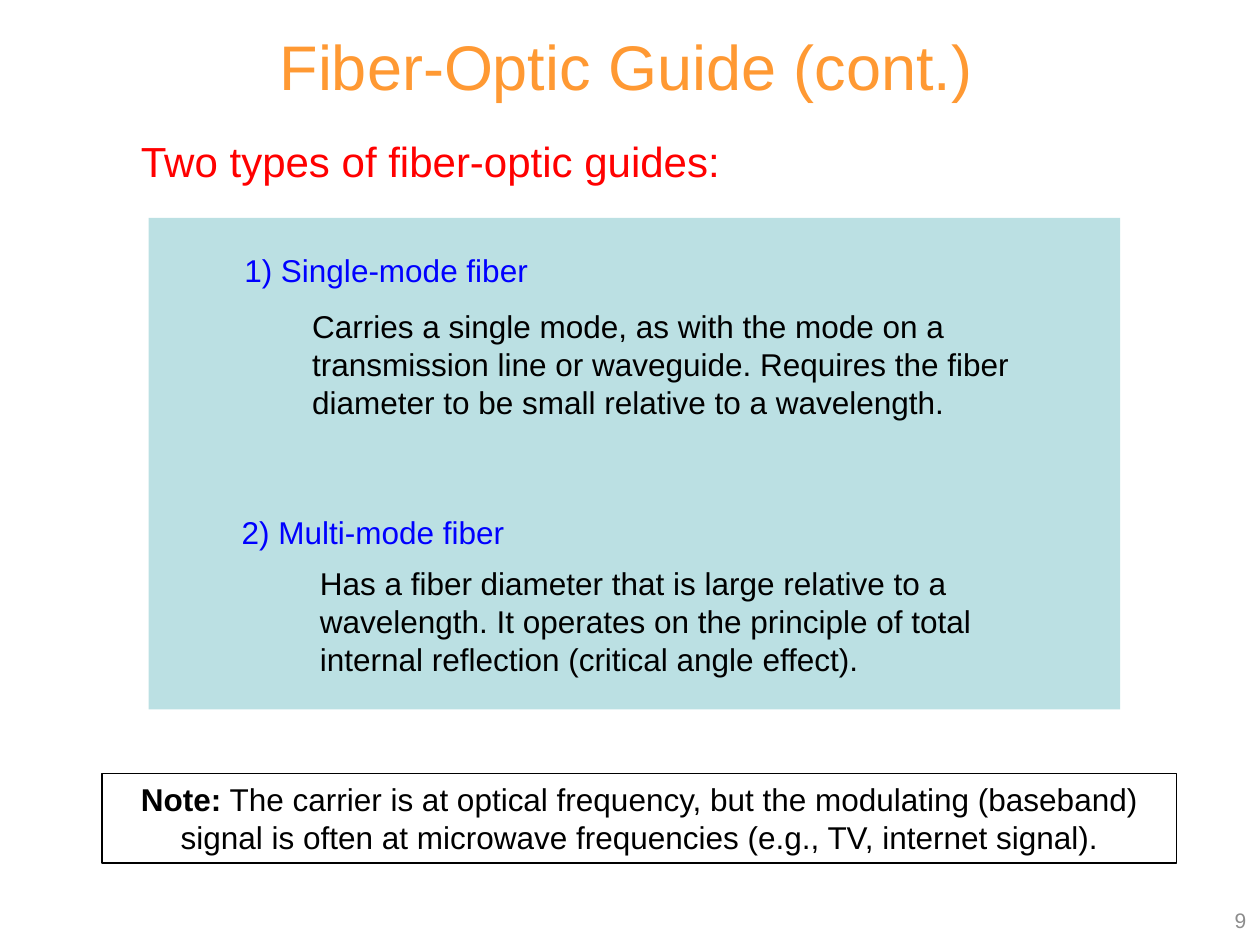
from pptx import Presentation
from pptx.dml.color import RGBColor
from pptx.enum.shapes import MSO_SHAPE
from pptx.enum.text import MSO_ANCHOR, MSO_AUTO_SIZE, PP_ALIGN
from pptx.util import Inches, Pt

RECT = MSO_SHAPE.RECTANGLE
TOP, MIDDLE = MSO_ANCHOR.TOP, MSO_ANCHOR.MIDDLE
LEFT, CENTER, RIGHT = PP_ALIGN.LEFT, PP_ALIGN.CENTER, PP_ALIGN.RIGHT
TITLE_ONLY = 5

FONT = "Arial"
ORANGE, RED, BLUE = "FF9933", "FF0000", "0000FF"
BLACK, GRAY, PALE_TEAL = "000000", "8C8C8C", "BBE0E3"

TITLE = "Fiber-Optic Guide (cont.)"
INTRO = "Two types of fiber-optic guides:"
# heading, its box, description, its box
FIBERS = [
    ("1) Single-mode fiber", (1.84, 1.94, 2.45, 0.4),
     "Carries a single mode, as with the mode on a transmission line or waveguide. "
     "Requires the fiber diameter to be small relative to a wavelength.",
     (2.38, 2.39, 5.93, 1)),
    ("2) Multi-mode fiber", (1.82, 4.02, 2.28, 0.4),
     "Has a fiber diameter that is large relative to a wavelength. It operates on the "
     "principle of total internal reflection (critical angle effect).",
     (2.44, 4.43, 5.93, 1)),
]
NOTE_LABEL = "Note:"
NOTE = (" The carrier is at optical frequency, but the modulating (baseband) signal "
        "is often at microwave frequencies (e.g., TV, internet signal).")
PAGE_NUMBER = "9"


def rgb(value):
    return RGBColor.from_string(value)


def inches(box):
    return [Inches(length) for length in box]


def write(shape, text, size=18, color=BLACK, align=LEFT, anchor=TOP, wrap=True, lead=""):
    """Fill a shape with one paragraph; lead is a bold opening."""
    frame = shape.text_frame
    frame.auto_size = MSO_AUTO_SIZE.NONE
    frame.word_wrap = wrap
    frame.vertical_anchor = anchor
    paragraph = frame.paragraphs[0]
    paragraph.alignment = align
    for part, bold in ((lead, True), (text, False)):
        if part:
            run = paragraph.add_run()
            run.text = part
            run.font.name = FONT
            run.font.size = Pt(size)
            run.font.bold = bold
            run.font.color.rgb = rgb(color)


def add_text(slide, box, text, **style):
    write(slide.shapes.add_textbox(*inches(box)), text, **style)


def add_rect(slide, box, fill=None, line=None):
    rect = slide.shapes.add_shape(RECT, *inches(box))
    rect.shadow.inherit = False
    if fill:
        rect.fill.solid()
        rect.fill.fore_color.rgb = rgb(fill)
    else:
        rect.fill.background()
    if line:
        rect.line.color.rgb = rgb(line)
        rect.line.width = Pt(0.75)
    else:
        rect.line.fill.background()
    return rect


def main():
    deck = Presentation()
    deck.slide_width, deck.slide_height = Inches(10), Inches(7.5)
    slide = deck.slides.add_slide(deck.slide_layouts[TITLE_ONLY])

    title = slide.shapes.title
    title.left, title.top, title.width, title.height = inches((1.08, 0.17, 7.78, 0.71))
    write(title, TITLE, size=36, color=ORANGE, align=CENTER)

    add_rect(slide, (1.18, 1.73, 7.71, 3.9), fill=PALE_TEAL)
    add_text(slide, (1.02, 1.03, 4.82, 0.5), INTRO, size=24, color=RED, wrap=False)
    for heading, heading_box, description, description_box in FIBERS:
        add_text(slide, heading_box, heading, color=BLUE, wrap=False)
        add_text(slide, description_box, description)

    note = add_rect(slide, (0.81, 6.14, 8.53, 0.71), line=BLACK)
    write(note, NOTE, align=CENTER, lead=NOTE_LABEL)
    add_text(slide, (7.66, 7.1, 2.33, 0.4), PAGE_NUMBER, size=12, color=GRAY,
             align=RIGHT, anchor=MIDDLE)

    deck.save("out.pptx")


if __name__ == "__main__":
    main()
